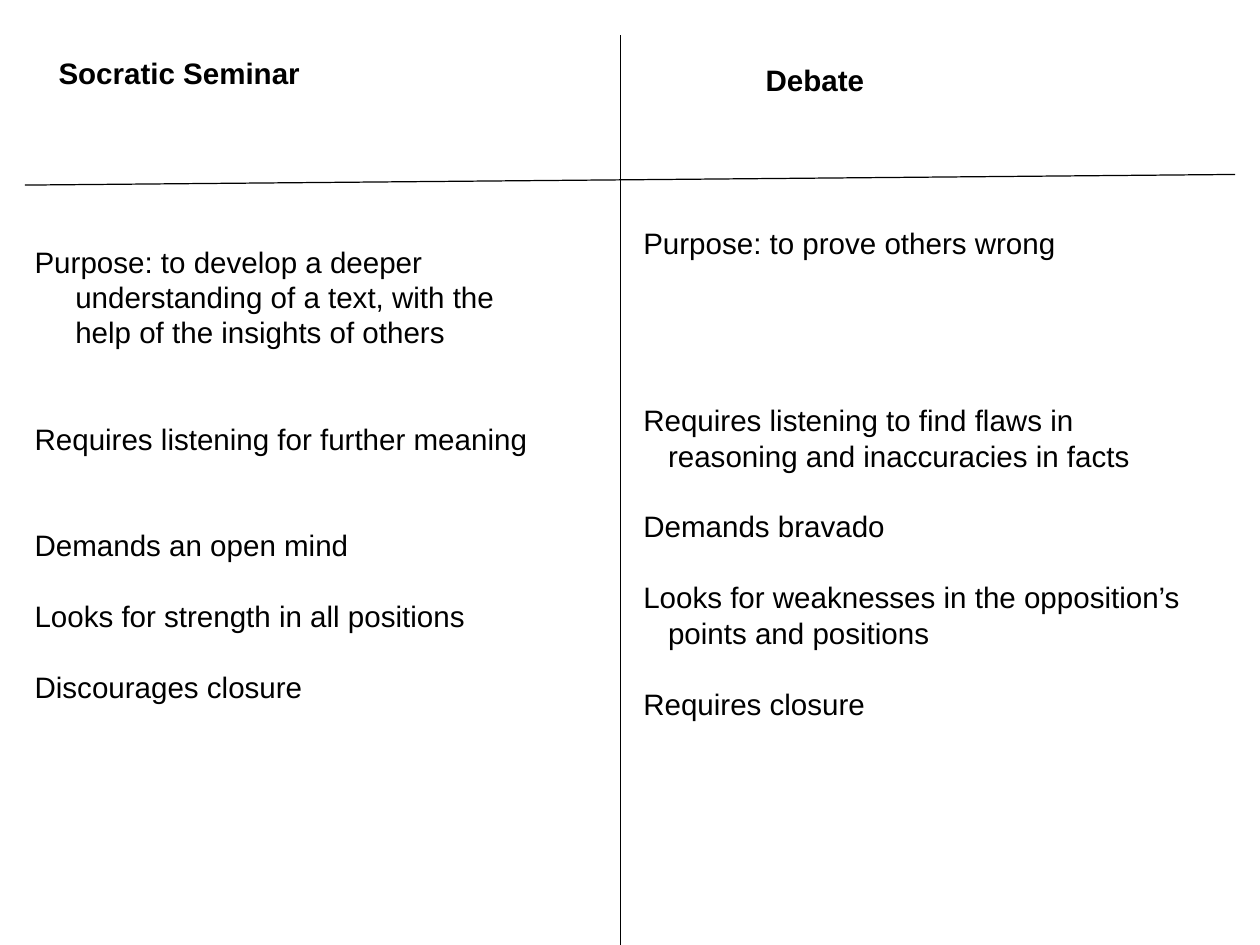
from lxml.etree import SubElement
from pptx import Presentation
from pptx.dml.color import RGBColor
from pptx.enum.shapes import MSO_CONNECTOR
from pptx.enum.text import MSO_ANCHOR
from pptx.oxml.ns import qn
from pptx.util import Inches, Pt

BLACK = "000000"
FONT_NAME = "Arial"
FONT_SIZE = 24
LINE_PITCH = 28.8

# Each statement: blank lines' worth of space above it, then its lines.
SEMINAR_STATEMENTS = [
    (0, ["Purpose: to develop a deeper",
         "understanding of a text, with the",
         "help of the insights of others"]),
    (2, ["Requires listening for further meaning"]),
    (2, ["Demands an open mind"]),
    (1, ["Looks for strength in all positions"]),
    (1, ["Discourages closure"]),
]
DEBATE_STATEMENTS = [
    (0, ["Purpose: to prove others wrong"]),
    (4, ["Requires listening to find flaws in",
         "reasoning and inaccuracies in facts"]),
    (1, ["Demands bravado"]),
    (1, ["Looks for weaknesses in the opposition’s",
         "points and positions"]),
    (1, ["Requires closure"]),
]


def color(hex_value):
    return RGBColor.from_string(hex_value)


def add_rule(slide, start, end):
    line = slide.shapes.add_connector(
        MSO_CONNECTOR.STRAIGHT, *(Inches(value) for value in start + end))
    line.line.color.rgb = color(BLACK)
    line.line.width = Pt(1)
    SubElement(line._element.spPr, qn("a:effectLst"))


def add_run(paragraph, text, bold):
    run = paragraph.add_run()
    run.text = text
    run.font.name = FONT_NAME
    run.font.size = Pt(FONT_SIZE)
    run.font.bold = bold
    run.font.color.rgb = color(BLACK)


def set_hanging_indent(paragraph, indent):
    properties = paragraph._p.get_or_add_pPr()
    properties.set("marL", str(Inches(indent)))
    properties.set("indent", str(-Inches(indent)))


def add_statements(slide, box, statements, indent=0, bold=False):
    """Add a text box with one hanging paragraph per statement."""
    shape = slide.shapes.add_textbox(*(Inches(value) for value in box))
    frame = shape.text_frame
    frame.word_wrap = True
    frame.vertical_anchor = MSO_ANCHOR.TOP
    frame.margin_left = frame.margin_right = Inches(0.07)
    frame.margin_top = frame.margin_bottom = Inches(0.07)
    for index, (gap, lines) in enumerate(statements):
        paragraph = frame.add_paragraph() if index else frame.paragraphs[0]
        paragraph.line_spacing = Pt(LINE_PITCH)
        paragraph.space_before = Pt(gap * LINE_PITCH)
        set_hanging_indent(paragraph, indent)
        for number, text in enumerate(lines):
            if number:
                paragraph.add_line_break()
            add_run(paragraph, text, bold)


def add_heading(slide, box, text):
    add_statements(slide, box, [(0, [text])], bold=True)


def main():
    presentation = Presentation()
    presentation.slide_width = Inches(14.22)
    presentation.slide_height = Inches(10.67)
    slide = presentation.slides.add_slide(presentation.slide_layouts[6])

    add_rule(slide, (0.28, 2.09), (13.94, 1.97))
    add_rule(slide, (7, 0.4), (7, 10.67))
    add_heading(slide, (0.59, 0.55, 2.92, 0.52), "Socratic Seminar")
    add_heading(slide, (8.57, 0.63, 1.31, 0.52), "Debate")
    add_statements(slide, (0.32, 2.68, 5.81, 5.19), SEMINAR_STATEMENTS, 0.46)
    add_statements(slide, (7.19, 2.47, 6.3, 5.58), DEBATE_STATEMENTS, 0.28)
    presentation.save("out.pptx")


if __name__ == "__main__":
    main()
